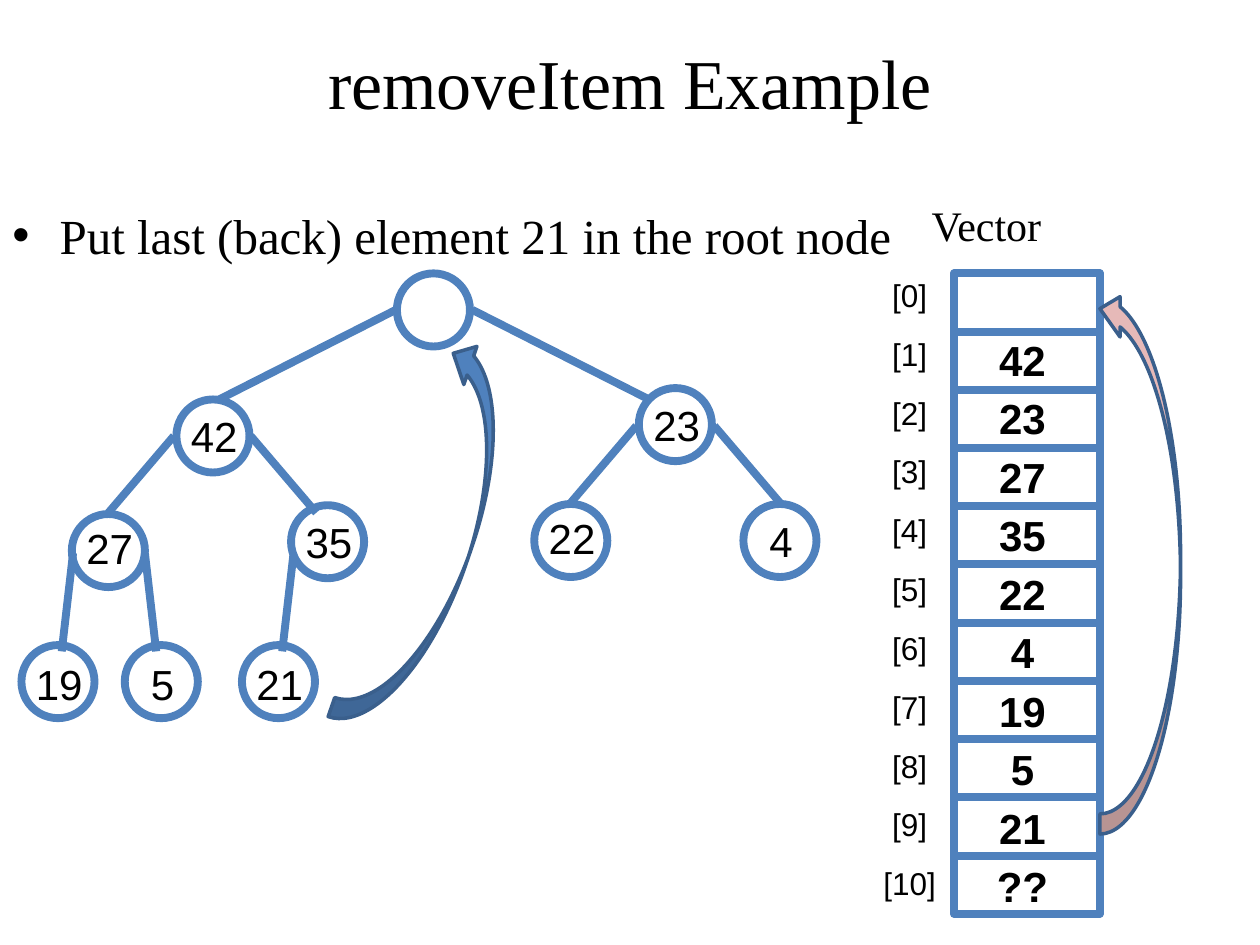
from lxml import etree
from pptx import Presentation, util as u
from pptx.dml.color import RGBColor
from pptx.enum import shapes, text
from pptx.oxml.ns import qn

COLORS = {"ink": "000000", "blue": "4F81BD", "navy": "3A5F8C", "pink": "E6B9B8"}
SERIF, SANS = "Times New Roman", "Arial"
COLS, ROWS = 100, 75  # slide grid
NODE = 5.8  # node diameter in grid columns


class Deck:
    """Style and current slide; all lengths are grid columns and rows."""

    def __init__(self):
        self.prs = Presentation()
        self.prs.slide_width, self.prs.slide_height = u.Inches(10), u.Inches(7.5)
        self.s = self.prs.slides.add_slide(self.prs.slide_layouts[6])

    def x(self, cols):
        return round(self.prs.slide_width * cols / COLS)

    def y(self, rows):
        return round(self.prs.slide_height * rows / ROWS)

    def box(self, left, top, width, height):
        return self.x(left), self.y(top), self.x(width), self.y(height)

    def color(self, name):
        return RGBColor.from_string(COLORS[name])

    def stroke(self, sp, color, width):
        sp.line.color.rgb = self.color(color)
        sp.line.width = u.Pt(width)

    def text(self, words, at, size, font=SANS, bold=False, wrap=False,
             align=text.PP_ALIGN.CENTER, anchor=text.MSO_ANCHOR.MIDDLE):
        tf = self.s.shapes.add_textbox(*self.box(*at)).text_frame
        tf.word_wrap, tf.vertical_anchor = wrap, anchor
        p = tf.paragraphs[0]
        p.alignment = align
        r = p.add_run()
        r.text = words
        for key, value in {"name": font, "size": u.Pt(size), "bold": bold}.items():
            setattr(r.font, key, value)
        r.font.color.rgb = self.color("ink")
        return p

    def bullet(self, words, at, size, indent):
        p = self.text(words, at, size, SERIF, wrap=True,
                      align=text.PP_ALIGN.LEFT, anchor=text.MSO_ANCHOR.TOP)
        p.space_before = u.Pt(size * 0.2)
        pPr = p._p.get_or_add_pPr()
        pPr.set("marL", str(self.x(indent)))
        pPr.set("indent", str(-self.x(indent)))
        etree.SubElement(pPr, qn("a:buFont")).set("typeface", SANS)
        etree.SubElement(pPr, qn("a:buChar")).set("char", "•")

    def shape(self, kind, at, line="blue", width=4.5, fill=None):
        sp = self.s.shapes.add_shape(kind, *self.box(*at))
        sp.shadow.inherit = False
        if fill:
            sp.fill.solid()
            sp.fill.fore_color.rgb = self.color(fill)
        else:
            sp.fill.background()
        self.stroke(sp, line, width)
        return sp

    def swoop(self, at, fill, rotation=0):
        sp = self.shape(shapes.MSO_SHAPE.CURVED_LEFT_ARROW, at, "navy", 2, fill)
        sp.rotation = rotation
        sp._element.spPr.find(qn("a:xfrm")).set("flipV", "1")

    def node(self, label, left, top, drop):
        self.shape(shapes.MSO_SHAPE.OVAL, (left, top, NODE, NODE))
        self.text(label, (left + 0.1, top + drop, NODE, 5), 24)

    def edge(self, x1, y1, x2, y2):
        c = self.s.shapes.add_connector(shapes.MSO_CONNECTOR.STRAIGHT,
                                        self.x(x1), self.y(y1), self.x(x2), self.y(y2))
        self.stroke(c, "blue", 4.5)
        etree.SubElement(c._element.spPr, qn("a:effectLst"))


# Label, left, top, drop of the label below the node's top
NODES = [
    ("", 31.5, 21.7, 0.4), ("42", 14, 31.7, 0.4), ("23", 50.7, 30.8, 0.4),
    ("27", 5.7, 40.8, 0.2), ("35", 23.1, 40.1, 0.4), ("22", 42.4, 40, 0.2),
    ("4", 59, 40, 0.4), ("19", 1.7, 51.2, 0.6), ("5", 9.9, 51.2, 0.6),
    ("21", 19.2, 51.2, 0.6),
]
EDGES = [
    (31.4, 24.6, 17.4, 31.7), (37.5, 24.6, 51.5, 31.7),
    (13.8, 34.6, 8.6, 40.7), (19.9, 34.6, 25.1, 40.7),
    (50.5, 33.8, 45.3, 39.9), (56.7, 33.8, 61.9, 39.9),
    (5.8, 43.9, 4.9, 51.7), (11.5, 43.9, 12.4, 51.7), (23.3, 43.9, 22.4, 51.7),
]
VECTOR = ["", "42", "23", "27", "35", "22", "4", "19", "5", "21", "??"]


def main():
    d = Deck()

    # Headings
    d.text("removeItem Example", (5, 3, 90, 7), 40, SERIF, wrap=True)
    d.bullet("Put last (back) element 21 in the root node", (0, 15.8, 98.3, 54.2), 28, 3.75)
    d.text("Vector", (60.8, 15.3, 35, 5), 24, SERIF, wrap=True)

    # Vector cells with indices
    for i, value in enumerate(VECTOR):
        d.shape(shapes.MSO_SHAPE.RECTANGLE, (75.7, 21.7 + 4.62 * i, 11.6, 4.62))
        d.text(f"[{i}]", (69.1, 21.4 + 4.67 * i, 6.2, 4), 18)
        if value:
            d.text(value, (78.1, 21.4 + 4.64 * i, 6.1, 5), 24, bold=True)

    # Heap tree
    for node in NODES:
        if node[0]:
            d.node(*node)
        else:
            d.shape(shapes.MSO_SHAPE.OVAL, (*node[1:3], NODE, NODE))
    for ends in EDGES:
        d.edge(*ends)

    # Moves of the last element to the root
    d.swoop((31.1, 26.7, 6.4, 32.1), "blue", 19)
    d.swoop((87.3, 22.9, 6.4, 43.3), "pink")

    d.prs.save("out.pptx")


if __name__ == "__main__":
    main()
